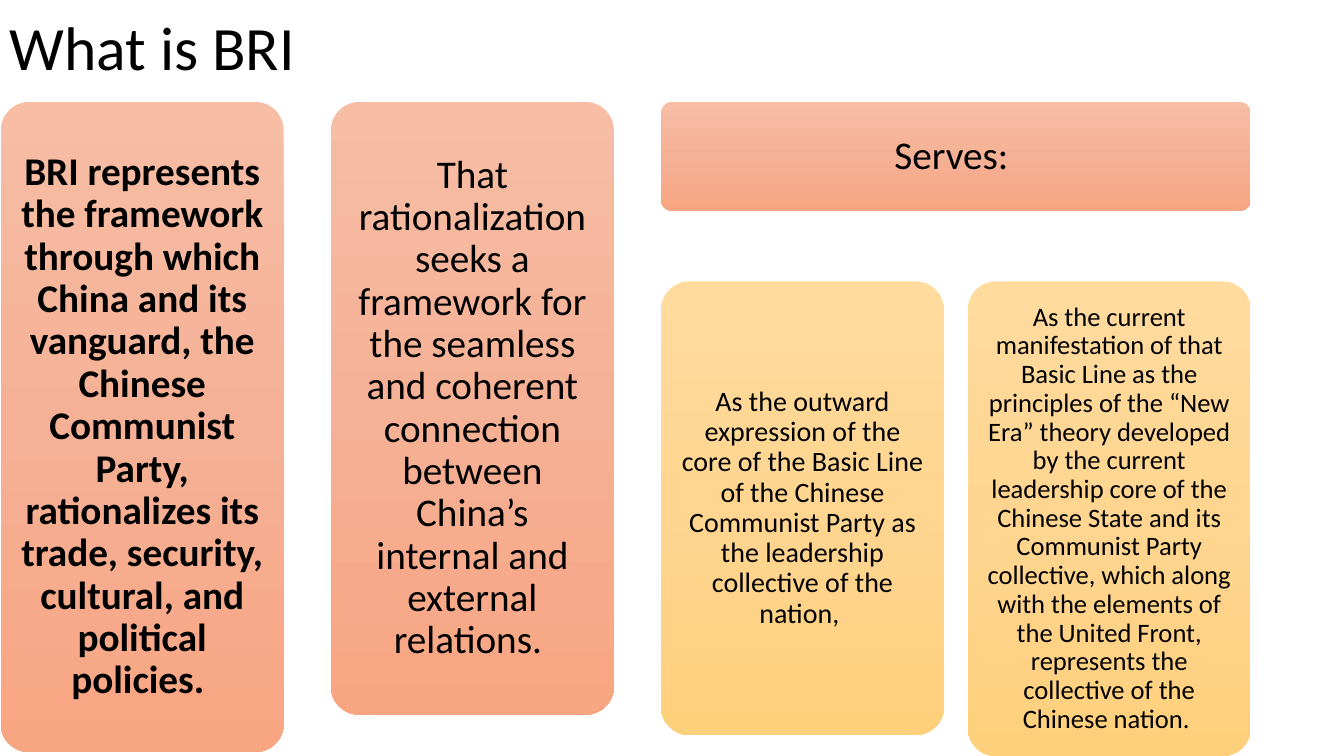
from dataclasses import dataclass

from lxml.etree import SubElement
from pptx import Presentation
from pptx.dml.color import RGBColor
from pptx.enum.shapes import MSO_SHAPE
from pptx.enum.text import MSO_ANCHOR, PP_ALIGN
from pptx.oxml.ns import qn
from pptx.util import Cm, Pt


@dataclass(frozen=True)
class Theme:
    font: str = "Calibri"
    text: RGBColor = RGBColor(0, 0, 0)
    coral: tuple = ("F7BDA5", "F5B196", "F8A582")
    amber: tuple = ("FFDB9E", "FFD590", "FFD07C")
    title: int = 44
    body: int = 28
    detail: int = 20
    small: int = 19


THEME = Theme()
CARD_W = 7.13
COLUMN_PITCH = 8.32
COLUMNS_TOP = 2.57
SERVES_W = 14.86

STATEMENTS = [
    (16.38, True,
     "BRI represents the framework through which China and its vanguard, "
     "the Chinese Communist Party, rationalizes its trade, security, "
     "cultural, and political policies. "),
    (15.44, False,
     "That rationalization seeks a framework for the seamless and coherent "
     "connection between China’s internal and external relations. "),
]
SERVED = [
    (11.43, THEME.detail,
     "As the outward expression of the core of the Basic Line of the Chinese "
     "Communist Party as the leadership collective of the nation, "),
    (11.96, THEME.small,
     "As the current manifestation of that Basic Line as the principles of "
     "the “New Era” theory developed by the current leadership core of the "
     "Chinese State and its Communist Party collective, which along with the "
     "elements of the United Front, represents the collective of the Chinese "
     "nation. "),
]


def write_text(sp, text, size, bold=False):
    tf = sp.text_frame
    tf.word_wrap = True
    tf.vertical_anchor = MSO_ANCHOR.MIDDLE
    p = tf.paragraphs[0]
    p.text = text
    p.line_spacing = 0.9
    p.font.name = THEME.font
    p.font.size = Pt(size)
    p.font.bold = bold
    p.font.color.rgb = THEME.text
    return p


def fill_gradient(sp, colors):
    sp.fill.gradient()
    sp.fill.gradient_angle = 270
    stops = sp._element.spPr.find(qn("a:gradFill")).find(qn("a:gsLst"))
    stops.clear()
    for i, color in enumerate(colors):
        stop = SubElement(stops, qn("a:gs"), pos=str(i * 50000))
        SubElement(stop, qn("a:srgbClr"), val=color)


def add_card(s, box, text, size, colors, inset, bold=False):
    sp = s.shapes.add_shape(MSO_SHAPE.ROUNDED_RECTANGLE, *map(Cm, box))
    sp.adjustments[0] = 0.1
    sp.shadow.inherit = False
    sp.line.fill.background()
    fill_gradient(sp, colors)
    tf = sp.text_frame
    tf.margin_left = tf.margin_right = Cm(inset)
    tf.margin_top = tf.margin_bottom = Cm(inset)
    write_text(sp, text, size, bold).alignment = PP_ALIGN.CENTER


def add_title(s, box, text):
    write_text(s.shapes.add_textbox(*map(Cm, box)), text, THEME.title)


def add_statements(s, left, top):
    for i, (height, bold, text) in enumerate(STATEMENTS):
        box = (left + i * COLUMN_PITCH, top, CARD_W, height)
        add_card(s, box, text, THEME.body, THEME.coral, 0.3, bold)


def add_serves(s, left, top, width):
    add_card(s, (left, top, width, 2.74), "Serves: ", THEME.body, THEME.coral, 0.3)
    pitch = width - CARD_W
    for i, (height, size, text) in enumerate(SERVED):
        box = (left + i * pitch, top + 4.52, CARD_W, height)
        add_card(s, box, text, size, THEME.amber, 0.2)


def main():
    prs = Presentation()
    prs.slide_width = Cm(33.87)
    prs.slide_height = Cm(19.05)
    s = prs.slides.add_slide(prs.slide_layouts[6])
    add_title(s, (0, 0, 11.15, COLUMNS_TOP), "What is BRI")
    add_statements(s, 0.02, COLUMNS_TOP)
    add_serves(s, 0.02 + len(STATEMENTS) * COLUMN_PITCH, COLUMNS_TOP, SERVES_W)
    prs.save("out.pptx")


if __name__ == "__main__":
    main()
